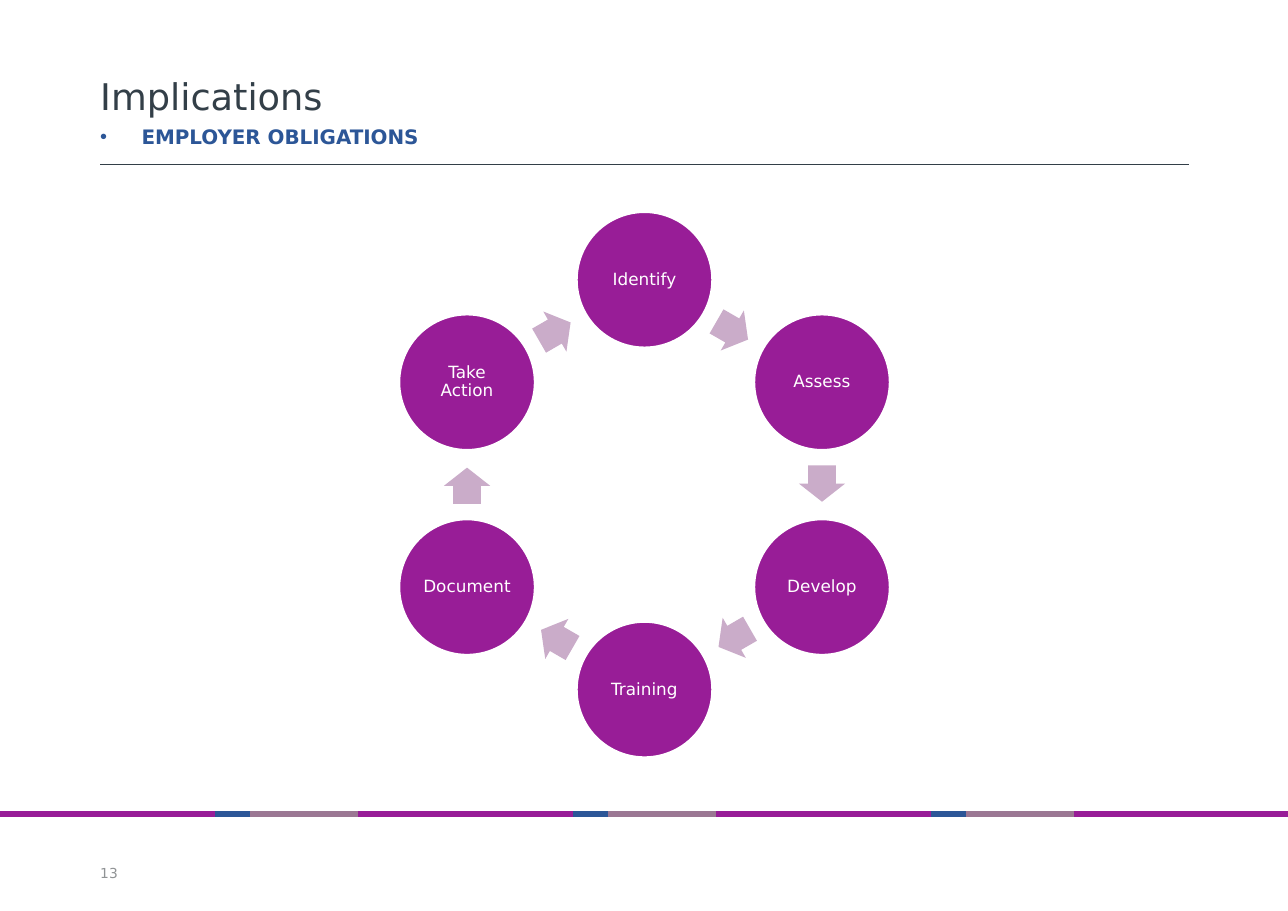
from itertools import accumulate, cycle
from math import cos, radians, sin

from lxml.etree import SubElement
from pptx import Presentation
from pptx.dml.color import RGBColor
from pptx.enum.shapes import MSO_CONNECTOR as Connector, MSO_SHAPE as Shape
from pptx.enum.text import MSO_ANCHOR as Anchor, MSO_AUTO_SIZE as AutoSize, PP_ALIGN as Align
from pptx.oxml.ns import qn
from pptx.util import Inches, Pt

PURPLE = RGBColor(0x98, 0x1D, 0x97)
BLUE = RGBColor(0x2C, 0x56, 0x97)
MAUVE = RGBColor(0x9B, 0x77, 0x93)
LILAC = RGBColor(0xCA, 0xAC, 0xC9)
SLATE = RGBColor(0x33, 0x3F, 0x48)
GREY = RGBColor(0x90, 0x93, 0x95)
WHITE = RGBColor(0xFF, 0xFF, 0xFF)
FONT = "DejaVu Sans"

TITLE = "Implications"
SUBTITLE = "EMPLOYER OBLIGATIONS"
PAGE_NUMBER = "13"
STEPS = ["Identify", "Assess", "Develop", "Training", "Document", "Take Action"]
BAND = [(PURPLE, 1.95), (BLUE, 0.32), (MAUVE, 0.98)]
BAND_PARTS = 10

WIDTH, HEIGHT = 11.69, 8.27
MARGIN, TEXT_WIDTH = 0.91, 9.88
RULE_Y, BAND_Y = 1.49, 7.39
CENTER_X, CENTER_Y, RADIUS = 5.85, 4.4, 1.86
CIRCLE = 1.24
ARROW_LENGTH, ARROW_HEIGHT = 0.33, 0.42
ARROW_SHIFT = 0.01  # arrows sit slightly before the midpoint between circles


def place(shape, left, top, width, height):
    shape.left, shape.top = Inches(left), Inches(top)
    shape.width, shape.height = Inches(width), Inches(height)


def write(shape, text, size, color, bold=False, inset=0, anchor=Anchor.TOP, wrap=True):
    """Put one formatted paragraph into the shape and return it."""
    frame = shape.text_frame
    frame.margin_left = frame.margin_right = Inches(inset)
    frame.margin_top = frame.margin_bottom = Inches(inset)
    frame.auto_size = AutoSize.NONE
    frame.word_wrap = wrap
    frame.vertical_anchor = anchor
    frame.text = text
    para = frame.paragraphs[0]
    para.alignment = Align.LEFT
    para.space_before = Pt(0)
    para.font.name, para.font.size = FONT, Pt(size)
    para.font.bold, para.font.color.rgb = bold, color
    return para


def draw_line(page, start, end, y, color, weight):
    line = page.shapes.add_connector(
        Connector.STRAIGHT, Inches(start), Inches(y), Inches(end), Inches(y))
    line.line.color.rgb = color
    line.line.width = Pt(weight)
    SubElement(line._element.spPr, qn("a:effectLst"))


def add_centered(page, kind, x, y, width, height, color):
    shape = page.shapes.add_shape(
        kind, Inches(x - width / 2), Inches(y - height / 2), Inches(width), Inches(height))
    shape.shadow.inherit = False
    shape.fill.solid()
    shape.fill.fore_color.rgb = color
    return shape


def draw_frame(page):
    """Draw the coloured footer band and the rule below the heading."""
    parts = [part for part, _ in zip(cycle(BAND), range(BAND_PARTS))]
    ends = accumulate(width for _, width in parts)
    for (color, width), end in zip(parts, ends):
        draw_line(page, end - width, min(end, WIDTH), BAND_Y, color, 4)
    draw_line(page, MARGIN, MARGIN + TEXT_WIDTH, RULE_Y, SLATE, 0.25)


def draw_heading(page):
    title, subtitle = page.shapes.title, page.placeholders[1]
    place(title, MARGIN, 0.67, TEXT_WIDTH, 0.43)
    write(title, TITLE, 24, SLATE)

    place(subtitle, MARGIN, 1.13, TEXT_WIDTH, 0.25)
    subtitle.text_frame.text = SUBTITLE
    properties = subtitle.text_frame.paragraphs[0]._p.get_or_add_pPr()
    properties.set("marL", "0")
    properties.set("indent", "0")
    SubElement(properties, qn("a:buNone"))
    write(subtitle, SUBTITLE, 13, BLUE, bold=True).space_after = Pt(8)

    number = page.shapes.add_textbox(Inches(MARGIN), Inches(7.72), Inches(0.28), Inches(0.28))
    write(number, PAGE_NUMBER, 9, GREY, anchor=Anchor.BOTTOM, wrap=False)


def draw_cycle(page):
    turn = 360 / len(STEPS)
    arrow_radius = RADIUS * cos(radians(turn / 2))
    for index, step in enumerate(STEPS):
        angle = radians(index * turn - 90)
        circle = add_centered(page, Shape.OVAL, CENTER_X + RADIUS * cos(angle),
                              CENTER_Y + RADIUS * sin(angle), CIRCLE, CIRCLE, PURPLE)
        circle.line.color.rgb = WHITE
        circle.line.width = Pt(2)
        para = write(circle, step, 11, WHITE, inset=0.02, anchor=Anchor.MIDDLE)
        para.alignment = Align.CENTER
        para.line_spacing = 0.9

        middle = angle + radians(turn / 2)
        heading = middle + radians(90)
        arrow = add_centered(
            page, Shape.RIGHT_ARROW,
            CENTER_X + arrow_radius * cos(middle) - ARROW_SHIFT * cos(heading),
            CENTER_Y + arrow_radius * sin(middle) - ARROW_SHIFT * sin(heading),
            ARROW_LENGTH, ARROW_HEIGHT, LILAC)
        arrow.line.fill.background()
        arrow.adjustments[0], arrow.adjustments[1] = 0.6, 0.5
        arrow.rotation = (index + 0.5) * turn


def main():
    deck = Presentation()
    deck.slide_width, deck.slide_height = Inches(WIDTH), Inches(HEIGHT)
    page = deck.slides.add_slide(deck.slide_layouts[1])
    draw_frame(page)
    draw_heading(page)
    draw_cycle(page)
    deck.save("out.pptx")


if __name__ == "__main__":
    main()
